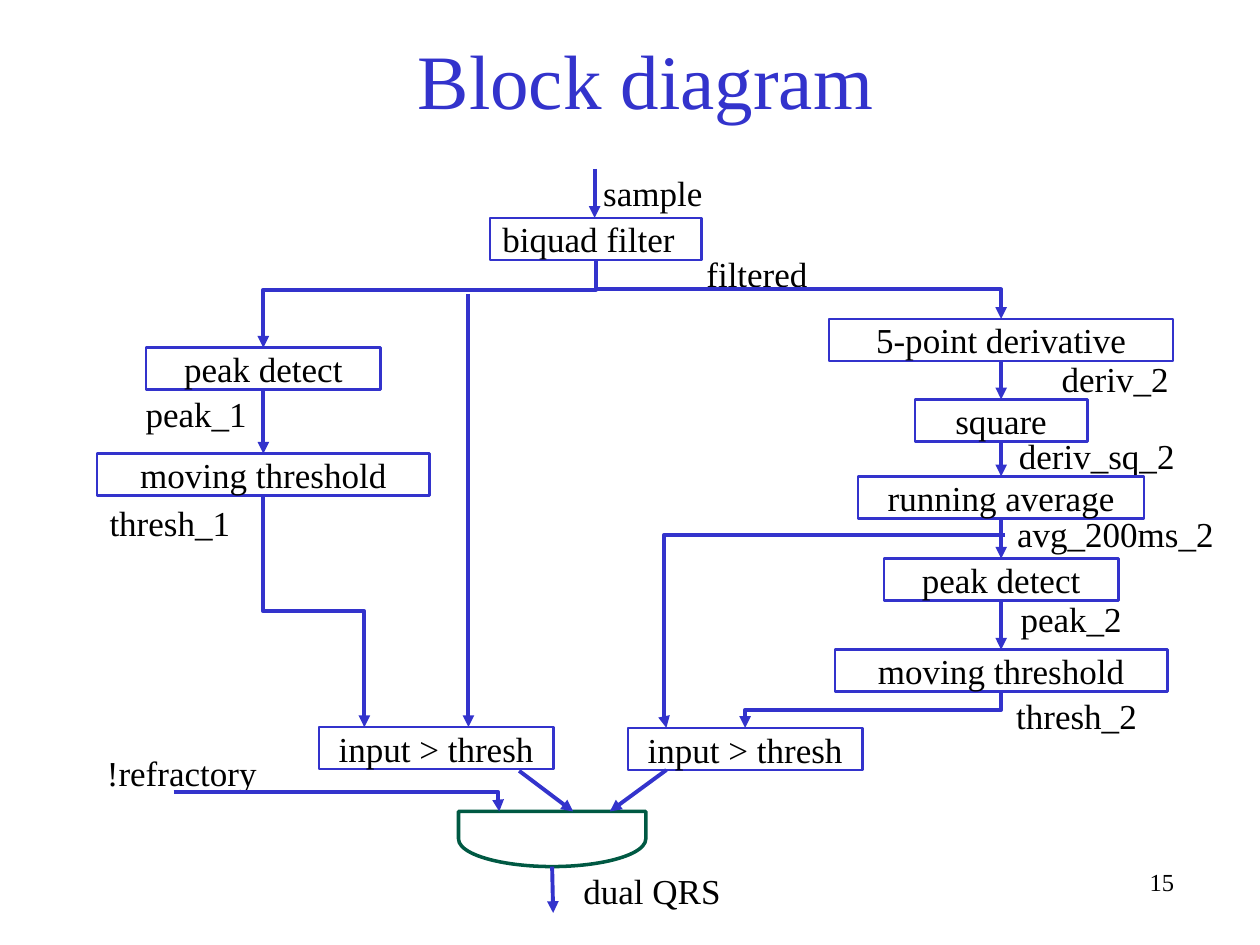
from dataclasses import dataclass

from lxml import etree
from pptx import Presentation
from pptx.dml.color import RGBColor
from pptx.enum import shapes, text
from pptx.oxml.ns import qn
from pptx.util import Pt

COLORS = {"blue": "3333CC", "green": "005943", "ink": "000000"}
FONT = "Times New Roman"
BLOCK_HEIGHT = 24
LABEL_HEIGHT = 31.5
LEFT, CENTER, RIGHT = text.PP_ALIGN.LEFT, text.PP_ALIGN.CENTER, text.PP_ALIGN.RIGHT
LABEL_FORMAT = {"word_wrap": True, "auto_size": text.MSO_AUTO_SIZE.SHAPE_TO_FIT_TEXT,
                "vertical_anchor": text.MSO_ANCHOR.TOP}
BLOCK_FORMAT = LABEL_FORMAT | {"margin_top": 0, "margin_bottom": 0}
TITLE_FORMAT = {"word_wrap": True, "auto_size": text.MSO_AUTO_SIZE.NONE,
                "vertical_anchor": text.MSO_ANCHOR.MIDDLE}


@dataclass
class Box:
    left: float
    top: float
    width: float
    height: float

    @property
    def axis(self):
        return self.left + self.width / 2

    def lengths(self):
        return [Pt(value) for value in (self.left, self.top, self.width, self.height)]


def rgb(name):
    return RGBColor.from_string(COLORS[name])


def write(shape, words, frame_format, align=LEFT, size=20, color="ink"):
    frame = shape.text_frame
    for name, value in frame_format.items():
        setattr(frame, name, value)
    para = frame.paragraphs[0]
    para.alignment = align
    span = para.add_run()
    span.text = words
    for name, value in {"name": FONT, "size": Pt(size)}.items():
        setattr(span.font, name, value)
    span.font.color.rgb = rgb(color)


def add_label(page, words, left, top, width, align=LEFT, size=20):
    label = page.shapes.add_textbox(*Box(left, top, width, LABEL_HEIGHT).lengths())
    write(label, words, LABEL_FORMAT, align, size)


def add_outline(page, kind, box, color, weight):
    shape = page.shapes.add_shape(kind, *box.lengths())
    shape.shadow.inherit = False
    shape.fill.background()
    shape.line.color.rgb = rgb(color)
    shape.line.width = Pt(weight)
    return shape


def add_block(page, words, box, align=CENTER):
    block = add_outline(page, shapes.MSO_SHAPE.RECTANGLE, box, "blue", 1.5)
    write(block, words, BLOCK_FORMAT, align)


def add_arrow(page, start, end, kind=shapes.MSO_CONNECTOR.STRAIGHT):
    arrow = page.shapes.add_connector(kind, *(Pt(value) for value in (*start, *end)))
    arrow.line.color.rgb = rgb("blue")
    arrow.line.width = Pt(2.25)
    etree.SubElement(arrow.line._get_or_add_ln(), qn("a:tailEnd"), type="triangle")
    etree.SubElement(arrow.element.spPr, qn("a:effectLst"))
    return arrow


def add_elbow(page, start, end, bend=0.5, vertical=True):
    (x1, y1), (x2, y2) = start, end
    if vertical:
        middle_x, middle_y = (x1 + x2) / 2, (y1 + y2) / 2
        half_run, half_rise = abs(y2 - y1) / 2, abs(x2 - x1) / 2
        start = middle_x - half_run, middle_y - half_rise
        end = middle_x + half_run, middle_y + half_rise
    elbow = add_arrow(page, start, end, shapes.MSO_CONNECTOR.ELBOW)
    if vertical:
        frame = elbow.element.spPr.find(qn("a:xfrm"))
        turn = {"rot": "16200000", "flipH": "1"} if x2 > x1 else {"rot": "5400000"}
        for name, value in turn.items():
            frame.set(name, value)
    guides = elbow.element.spPr.find(qn("a:prstGeom")).find(qn("a:avLst"))
    etree.SubElement(guides, qn("a:gd"), name="adj1", fmla=f"val {round(bend * 100000)}")


def add_title(page, box):
    title = page.shapes.title
    names = ("left", "top", "width", "height")
    for name, value in zip(names, box.lengths()):
        setattr(title, name, value)
    write(title, "Block diagram", TITLE_FORMAT, CENTER, 44, "blue")


def add_source(page, box):
    add_arrow(page, (box.axis - 0.7, box.top - 28), (box.axis - 0.7, box.top))
    add_label(page, "sample", box.left + 57.6, box.top - 30, 129)
    add_block(page, "biquad filter", box, LEFT)
    add_label(page, "filtered", box.left + 116.6, box.top + 16, 89)


def add_channel(page, box, stages):
    previous = None
    for offset, width, words, label, label_x, label_y, label_width in stages:
        top = box.top + offset
        add_block(page, words, Box(box.axis - width / 2, top, width, BLOCK_HEIGHT))
        add_label(page, label, box.axis + label_x, top + label_y, label_width)
        if previous is not None:
            add_arrow(page, (box.axis, previous + BLOCK_HEIGHT), (box.axis, top))
        previous = top


def add_gate(page, box):
    rotated = Box(box.axis - box.height / 2, box.top + (box.height - box.width) / 2,
                  box.height, box.width)
    gate = add_outline(page, shapes.MSO_SHAPE.FLOWCHART_DELAY, rotated, "green", 2)
    gate.rotation = 90
    bottom = box.top + box.height
    add_arrow(page, (box.axis, bottom), (box.axis + 0.6, bottom + 26.5))
    add_label(page, "dual QRS", box.axis + 10.8, bottom - 2, 108)
    add_label(page, "!refractory", box.left - 208, box.top - 38, 108)
    add_elbow(page, (box.left - 162.7, box.top - 11), (box.left + 23.3, box.top),
              0.997, vertical=False)


def add_links(page, source, left, right, comparators, gate):
    first, second = comparators
    outlet = source.axis, source.top + source.height
    add_elbow(page, outlet, (left.axis, left.top), 0.34)
    add_elbow(page, outlet, (right.axis, right.top))
    add_elbow(page, (left.axis, left.top + left.height), (first.left + 26, first.top))
    add_arrow(page, (first.left + 85.5, 168), (first.left + 85.5, first.top))
    add_elbow(page, (right.axis + 2, 305.5), (second.left + 22, second.top),
              1.006, vertical=False)
    add_elbow(page, (right.axis, right.top + right.height), (second.left + 67, second.top))
    add_arrow(page, (first.left + 114.5, first.top + 25), (gate.axis + 12, gate.top))
    add_arrow(page, (second.left + 22, second.top + BLOCK_HEIGHT), (gate.axis + 33, gate.top))


LEFT_STAGES = [
    (0, 134, "peak detect", "peak_1", -74.4, 22.3, 89),
    (60.5, 190, "moving threshold", "thresh_1", -95, 23.7, 101),
]
RIGHT_STAGES = [
    (0, 196.6, "5-point derivative", "deriv_2", 27.5, 18.7, 89),
    (46, 98.6, "square", "deriv_sq_2", 3, 16.6, 126),
    (90, 163.5, "running average", "avg_200ms_2", 2, 17.2, 144),
    (137, 134, "peak detect", "peak_2", 4, 18.5, 89),
    (189, 190, "moving threshold", "thresh_2", 1.5, 22.3, 101),
]


def main():
    deck = Presentation()
    deck.slide_width, deck.slide_height = Pt(720), Pt(540)
    page = deck.slides.add_slide(deck.slide_layouts[5])
    source = Box(280, 124.5, 121, BLOCK_HEIGHT)
    left = Box(55.5, 198.7, 190, 84.5)
    right = Box(473.8, 182.2, 196.6, 213)
    comparators = [Box(182.2, 415.5, 134, BLOCK_HEIGHT), Box(358.8, 416, 134, BLOCK_HEIGHT)]
    gate = Box(262, 463.7, 107, 31.5)
    add_title(page, Box(63, 22.5, 612, 45))
    add_source(page, source)
    add_channel(page, left, LEFT_STAGES)
    add_channel(page, right, RIGHT_STAGES)
    for box in comparators:
        add_block(page, "input > thresh", box)
    add_gate(page, gate)
    add_links(page, source, left, right, comparators, gate)
    add_label(page, "15", 450, 492, 228, RIGHT, 14)
    deck.save("out.pptx")


if __name__ == "__main__":
    main()
